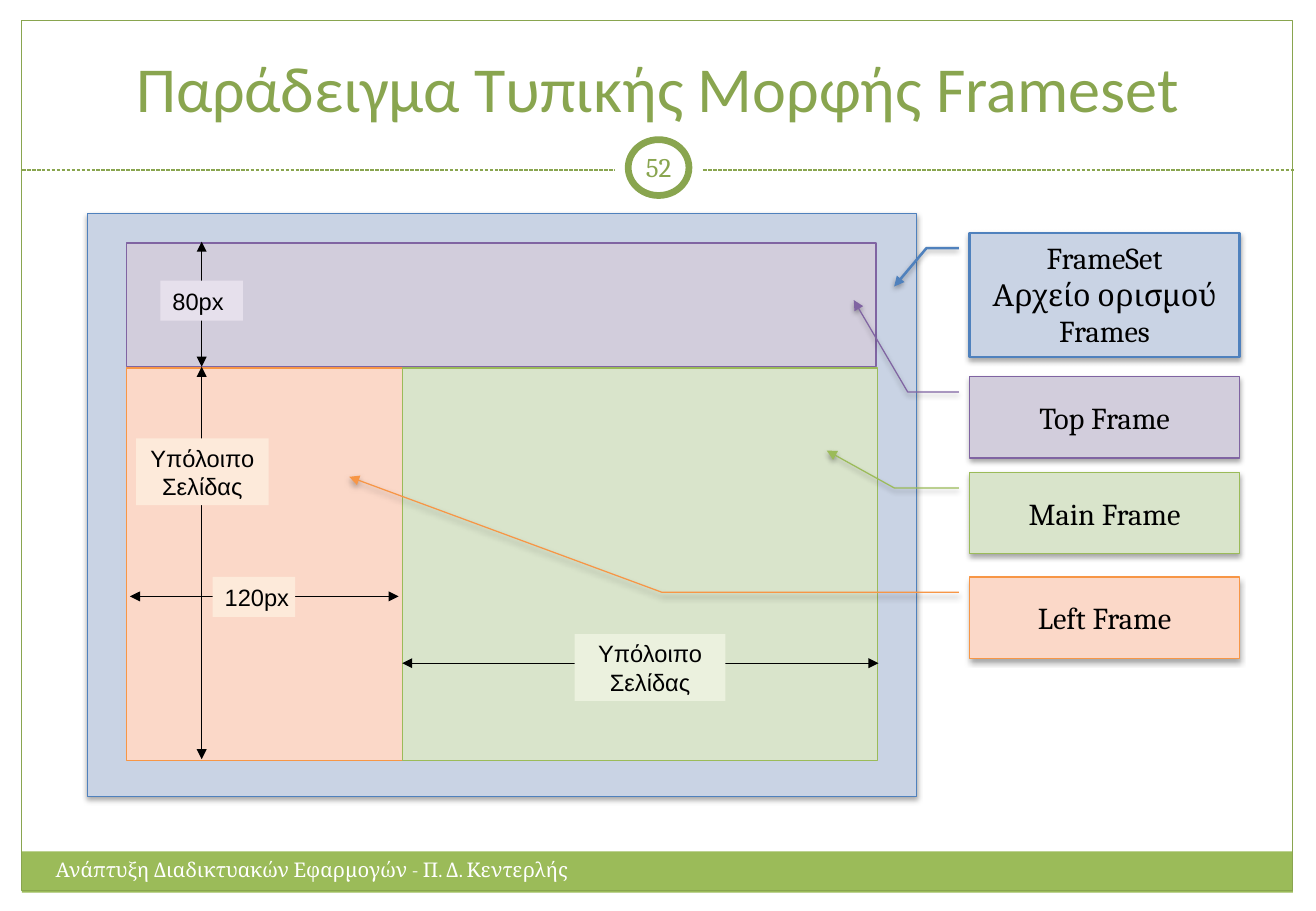
from lxml import etree
from pptx import Presentation
from pptx.dml.color import RGBColor
from pptx.enum.dml import MSO_LINE
from pptx.enum.shapes import MSO_CONNECTOR, MSO_SHAPE
from pptx.enum.text import MSO_ANCHOR, PP_ALIGN
from pptx.oxml.ns import qn
from pptx.util import Pt

PX = 9144
RECT = MSO_SHAPE.RECTANGLE
OVAL = MSO_SHAPE.OVAL
CALL = MSO_SHAPE.LINE_CALLOUT_2
LINE = MSO_CONNECTOR.STRAIGHT
DASH = MSO_LINE.SQUARE_DOT
TOP, MID, LOW = MSO_ANCHOR.TOP, MSO_ANCHOR.MIDDLE, MSO_ANCHOR.BOTTOM
LEFT, MIDST = PP_ALIGN.LEFT, PP_ALIGN.CENTER

WHITE = RGBColor(0xFF, 0xFF, 0xFF)
BLACK = RGBColor(0x00, 0x00, 0x00)
OLIVE = RGBColor(0x89, 0xA5, 0x4F)
GREEN = RGBColor(0x9B, 0xBB, 0x59)
BLUE = RGBColor(0x4F, 0x81, 0xBD)
PLUM = RGBColor(0x80, 0x64, 0xA2)
AMBER = RGBColor(0xF7, 0x96, 0x46)
PALE_BLUE = RGBColor(0xC9, 0xD3, 0xE4)
PALE_PLUM = RGBColor(0xD2, 0xCD, 0xDC)
PALE_GREEN = RGBColor(0xD9, 0xE4, 0xCB)
PALE_AMBER = RGBColor(0xFB, 0xD8, 0xC8)
TAG_PLUM = RGBColor(0xE6, 0xE0, 0xEC)
TAG_AMBER = RGBColor(0xFD, 0xEA, 0xDA)
TAG_GREEN = RGBColor(0xEB, 0xF1, 0xDE)


def scale(*nums):
    return [n * PX for n in nums]


def add_text(shape, lines, size, font, color, align=MIDST, anchor=MID, wrap=True):
    frame = shape.text_frame
    frame.word_wrap = wrap
    frame.vertical_anchor = anchor
    for i, line in enumerate(lines):
        para = frame.add_paragraph() if i else frame.paragraphs[0]
        para.alignment = align
        run = para.add_run()
        run.text = line
        run.font.size = Pt(size)
        run.font.name = font
        run.font.color.rgb = color


def add_label(slide, box, words, size, font, color, align=MIDST, anchor=TOP):
    label = slide.shapes.add_textbox(*scale(*box))
    add_text(label, [words], size, font, color, align, anchor)
    return label


def add_box(slide, box, fill=None, edge=None, width=0.75, kind=RECT):
    shape = slide.shapes.add_shape(kind, *scale(*box))
    shape.shadow.inherit = False
    if fill is None:
        shape.fill.background()
    else:
        shape.fill.solid()
        shape.fill.fore_color.rgb = fill
    if edge is None:
        shape.line.fill.background()
    else:
        shape.line.color.rgb = edge
        shape.line.width = Pt(width)
    return shape


def add_shade(shape):
    effects = shape._element.spPr.find(qn("a:effectLst"))
    shade = etree.SubElement(effects, qn("a:outerShdw"), blurRad="40000",
                             dist="23000", dir="5400000", rotWithShape="0")
    tint = etree.SubElement(shade, qn("a:srgbClr"), val="000000")
    etree.SubElement(tint, qn("a:alpha"), val="35000")


def add_tip(shape, *ends):
    pen = shape.line._get_or_add_ln()
    for end in ends:
        etree.SubElement(pen, qn(end), type="triangle")


def add_line(slide, ends, color):
    line = slide.shapes.add_connector(LINE, *scale(*ends))
    line.line.color.rgb = color
    line.line.width = Pt(0.75)
    etree.SubElement(line._element.spPr, qn("a:effectLst"))
    return line


def add_span(slide, ends, box, words, fill, align=MIDST, wrap=True):
    add_tip(add_line(slide, ends, BLACK), "a:headEnd", "a:tailEnd")
    tag = add_box(slide, box, fill)
    add_text(tag, [words], 14, "Arial", BLACK, align, MID, wrap)


def add_call(slide, top, high, lines, fill, edge, width, bends, anchor=MID):
    call = add_box(slide, (798, top, 222, high), fill, edge, width, CALL)
    for i, bend in enumerate(bends):
        call.adjustments[i] = bend
    add_tip(call, "a:tailEnd")
    add_shade(call)
    add_text(call, lines, 18, "Cambria", BLACK, MIDST, anchor, len(lines) > 1)


def add_base(slide):
    add_box(slide, (18, 701, 1046, 34), GREEN)
    add_box(slide, (18, 17, 1046, 716), None, OLIVE)
    add_line(slide, (18, 140, 1065, 140), OLIVE).line.dash_style = DASH
    add_box(slide, (506, 105, 72, 67), WHITE, kind=OVAL)
    add_box(slide, (517, 115, 50, 46), WHITE, OLIVE, 4, OVAL)
    add_label(slide, (36, 25, 1011, 83), "Παράδειγμα Τυπικής Μορφής Frameset",
              38, "Calibri", OLIVE, MIDST, LOW)
    add_label(slide, (36, 701, 584, 33),
              "Ανάπτυξη Διαδικτυακών Εφαρμογών - Π. Δ. Κεντερλής",
              12, "Cambria", WHITE, LEFT)
    page = add_label(slide, (515, 113, 54, 48), "52", 16, "Cambria", OLIVE, MIDST, MID)
    frame = page.text_frame
    frame.margin_left = frame.margin_right = 5 * PX
    frame.margin_top = frame.margin_bottom = 5 * PX


def main():
    deck = Presentation()
    deck.slide_width, deck.slide_height = scale(1083, 750)
    slide = deck.slides.add_slide(deck.slide_layouts[6])
    add_base(slide)

    add_shade(add_box(slide, (72, 176, 682, 480), PALE_BLUE, BLUE))
    add_box(slide, (104, 303, 227, 323), PALE_AMBER, AMBER)
    add_box(slide, (104, 200, 617, 102), PALE_PLUM, PLUM)
    add_box(slide, (331, 303, 391, 323), PALE_GREEN, GREEN)

    add_call(slide, 192, 102, ["FrameSet", "Αρχείο ορισμού", "Frames"], PALE_BLUE,
             BLUE, 1.5, (0.12, -0.04, 0.12, -0.16, 0.43, -0.28), TOP)
    for top, name, fill, edge, bend, high, far in (
        (310, "Top Frame", PALE_PLUM, PLUM, -0.23, -0.94, -0.43),
        (389, "Main Frame", PALE_GREEN, GREEN, -0.28, -0.27, -0.53),
        (475, "Left Frame", PALE_AMBER, AMBER, -1.14, -1.23, -2.3),
    ):
        add_call(slide, top, 67, [name], fill, edge, 0.75,
                 (0.19, -0.04, 0.19, bend, high, far))

    rest = "Υπόλοιπο Σελίδας"
    add_span(slide, (166, 199, 166, 302), (132, 231, 68, 33), "80px",
             TAG_PLUM, LEFT, False)
    add_span(slide, (328, 491, 107, 491), (175, 475, 68, 33), "120px",
             TAG_AMBER, LEFT, False)
    add_span(slide, (723, 546, 331, 546), (473, 522, 124, 55), rest, TAG_GREEN)
    add_span(slide, (166, 302, 166, 625), (112, 361, 109, 55), rest, TAG_AMBER)
    deck.save("out.pptx")


if __name__ == "__main__":
    main()
